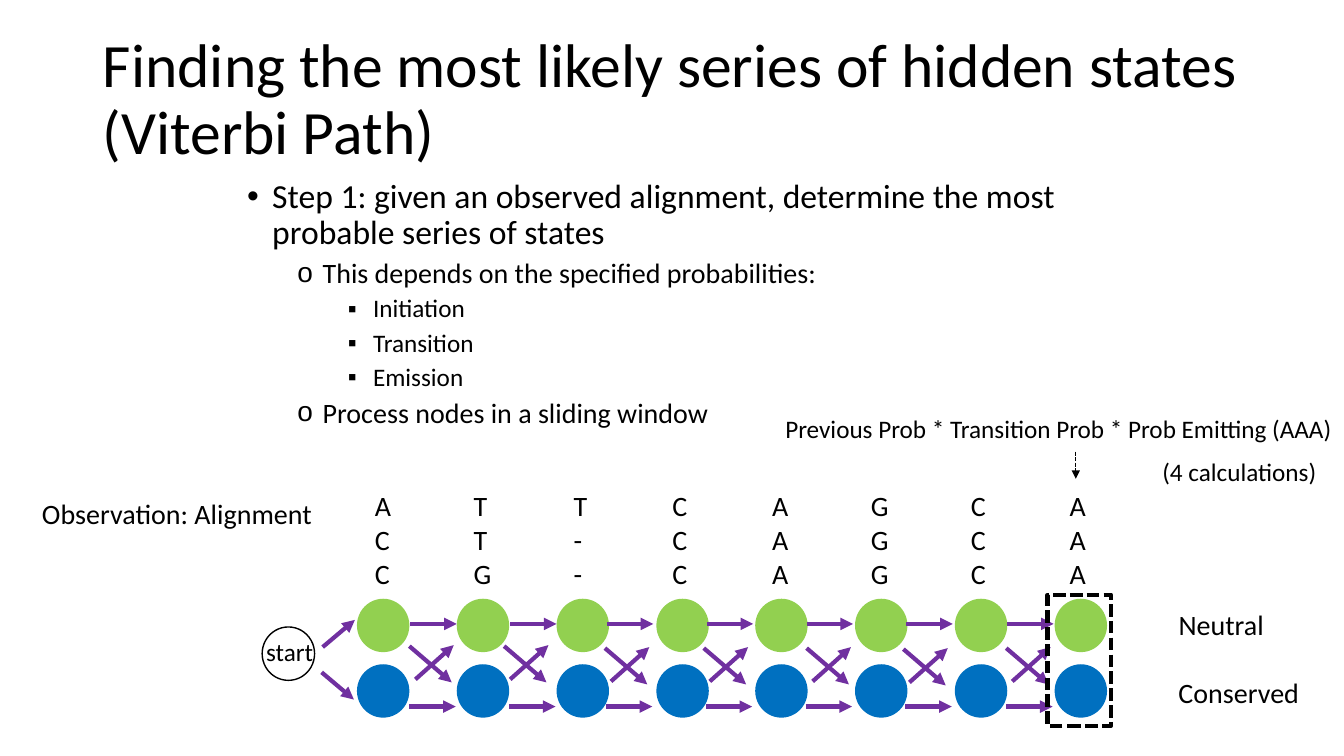
from lxml import etree
from pptx import Presentation
from pptx import util as u
from pptx.dml.color import RGBColor
from pptx.enum import dml, shapes, text
from pptx.oxml.ns import qn

COLORS = {
    "ink": "000000",
    "paper": "FFFFFF",
    "neutral": "92D050",
    "conserved": "0070C0",
    "transition": "7030A0",
}


class SlideBuilder:
    """Draws styled elements on one slide, with lengths in px of 1/100 inch."""

    SCALE = 9144
    FONT = "Calibri"

    def __init__(self, width, height):
        self.deck = Presentation()
        self.deck.slide_width = self.px(width)
        self.deck.slide_height = self.px(height)
        self.slide = self.deck.slides.add_slide(self.deck.slide_layouts[1])

    def px(self, length):
        return u.Emu(length * self.SCALE)

    def box(self, *lengths):
        return [self.px(length) for length in lengths]

    def color(self, name):
        return RGBColor.from_string(COLORS[name])

    def style(self, paragraph, size):
        paragraph.font.name = self.FONT
        paragraph.font.size = u.Pt(size)
        paragraph.font.color.rgb = self.color("ink")

    def place(self, holder, bounds, anchor):
        holder.left, holder.top, holder.width, holder.height = self.box(*bounds)
        frame = holder.text_frame
        frame.auto_size = text.MSO_AUTO_SIZE.NONE
        frame.vertical_anchor = anchor
        return frame

    def title(self, words, bounds):
        frame = self.place(self.slide.shapes.title, bounds, text.MSO_ANCHOR.MIDDLE)
        frame.text = words
        heading = frame.paragraphs[0]
        heading.alignment = text.PP_ALIGN.LEFT
        heading.line_spacing = 0.9
        self.style(heading, 44)

    def outline(self, points, bounds):
        levels = [("•", 24, 10), ("o", 20, 5), ("▪", 18, 5)]
        frame = self.place(self.slide.placeholders[1], bounds, text.MSO_ANCHOR.TOP)
        frame.text = "\n".join(words for _, words in points)
        for point, (level, _) in zip(frame.paragraphs, points):
            bullet, size, before = levels[level]
            point.level = level
            point.line_spacing = 0.9
            point.space_before = u.Pt(before)
            properties = point._p.get_or_add_pPr()
            properties.set("marL", str(self.px(25 + 50 * level)))
            properties.set("indent", str(self.px(-25)))
            etree.SubElement(properties, qn("a:buChar"), char=bullet)
            self.style(point, size)

    def label(self, words, bounds, size=20, align=text.PP_ALIGN.LEFT):
        frame = self.slide.shapes.add_textbox(*self.box(*bounds)).text_frame
        frame.word_wrap = True
        frame.text = words
        for paragraph in frame.paragraphs:
            paragraph.alignment = align
            self.style(paragraph, size)

    def shape(self, kind, bounds, fill=None, weight=0, dashed=False):
        figure = self.slide.shapes.add_shape(kind, *self.box(*bounds))
        figure.shadow.inherit = False
        if fill:
            figure.fill.solid()
            figure.fill.fore_color.rgb = self.color(fill)
        else:
            figure.fill.background()
        if weight:
            self.stroke(figure.line, "ink", weight, dashed)
        else:
            figure.line.fill.background()

    def circle(self, left, top, fill, weight=0):
        self.shape(shapes.MSO_SHAPE.OVAL, (left, top, 52, 53), fill, weight)

    def stroke(self, line, color, weight, dashed):
        line.color.rgb = self.color(color)
        line.width = u.Pt(weight)
        if dashed:
            line.dash_style = dml.MSO_LINE.SQUARE_DOT

    def arrow(self, x, y, dx, dy, color="transition", weight=3, dashed=False):
        link = self.slide.shapes.add_connector(
            shapes.MSO_CONNECTOR.STRAIGHT, *self.box(x, y, x + dx, y + dy)
        )
        self.stroke(link.line, color, weight, dashed)
        properties = link.element.spPr
        etree.SubElement(properties.find(qn("a:ln")), qn("a:tailEnd"), type="triangle")
        etree.SubElement(properties, qn("a:effectLst"))

    def save(self):
        self.deck.save("out.pptx")


def main():
    page = SlideBuilder(1333, 750)
    page.title(
        "Finding the most likely series of hidden states (Viterbi Path)",
        (92, 28, 1150, 145),
    )
    page.outline(
        [
            (0, "Step 1: given an observed alignment, determine the most probable series of states"),
            (1, "This depends on the specified probabilities:"),
            (2, "Initiation"),
            (2, "Transition"),
            (2, "Emission"),
            (1, "Process nodes in a sliding window"),
        ],
        (235, 173, 862, 381),
    )

    alignment = ["ACC", "TTG", "T--", "CCC", "AAA", "GGG", "CCC", "AAA"]
    for index, column in enumerate(alignment):
        node_left = round(354 + 98.86 * index)
        page.circle(node_left, 594, "neutral")
        page.circle(node_left, 659, "conserved")
        page.label("\n".join(column), (round(362 + 98.43 * index), 480, 25, 111))

    page.circle(260, 622, "paper", 1)
    page.label("start", (254, 626, 95, 40), 18)
    page.arrow(320, 642, 32, -27)
    page.arrow(319, 667, 32, 27)

    stay_starts = [407, 506, 602, 701, 800, 899, 999]
    switch_starts = [412, 506, 606, 704, 806, 902, 1004]
    switch_bottoms = [674, 674, 676, 676, 676, 677, 676]
    for stay, switch, bottom in zip(stay_starts, switch_starts, switch_bottoms):
        page.arrow(stay, 619, 46, 0)
        page.arrow(stay - 1, 701, 46, 0)
        page.arrow(switch, bottom, 38, -34)
        page.arrow(switch - 6, bottom - 33, 42, 36)

    page.shape(shapes.MSO_SHAPE.RECTANGLE, (1039, 590, 63, 130), weight=3, dashed=True)
    page.arrow(1067, 448, 0, 27, "ink", 1, True)
    page.label("Previous Prob * Transition Prob * Prob Emitting (AAA)", (769, 405, 565, 40), 18)
    page.label("(4 calculations)", (1143, 448, 196, 40), 18)
    page.label("Neutral", (1159, 598, 115, 44))
    page.label("Conserved", (1159, 665, 143, 44))
    page.label("Observation: Alignment", (12, 488, 327, 44), align=text.PP_ALIGN.CENTER)
    page.save()


if __name__ == "__main__":
    main()
